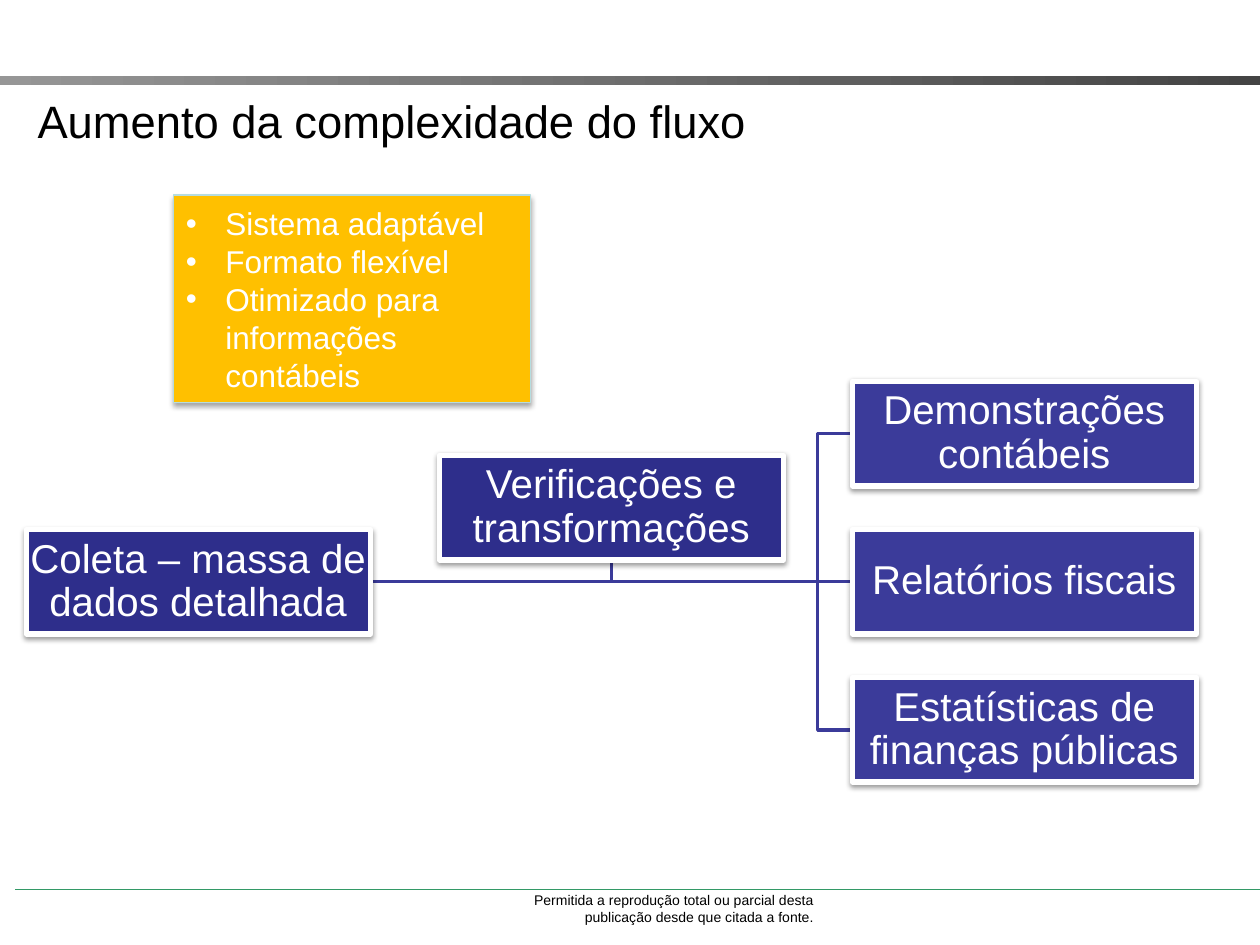
from lxml import etree
from pptx import Presentation
from pptx.dml.color import RGBColor
from pptx.enum import shapes, text
from pptx.oxml import ns
from pptx.util import Pt

COLORS = {
    "black": "000000", "white": "FFFFFF", "green": "339966",
    "bar_left": "969696", "bar_right": "444444",
    "navy": "2E2E8B", "indigo": "3B3B9A",
    "amber": "FFC000", "pale_blue": "B6DCDF",
}
FONT = "Arial"

TITLE = "Aumento da complexidade do fluxo"
FOOTER = "Permitida a reprodução total ou parcial desta publicação desde que citada a fonte."
FEATURES = ["Sistema adaptável", "Formato flexível", "Otimizado para informações contábeis"]
SOURCE = "Coleta – massa de dados detalhada"
CHECKS = "Verificações e transformações"
OUTPUTS = ["Demonstrações contábeis", "Relatórios fiscais", "Estatísticas de finanças públicas"]

BOX_WIDTH, BOX_HEIGHT = 196.8, 59.8
SOURCE_LEFT, CHECKS_LEFT, OUTPUT_LEFT = 15, 251, 487
AXIS_Y, ROW_PITCH = 332.4, 84.6
CHECKS_Y = AXIS_Y - ROW_PITCH / 2
SOURCE_RIGHT = SOURCE_LEFT + BOX_WIDTH
CHECKS_X = CHECKS_LEFT + BOX_WIDTH / 2
TRUNK_X = 467.3


def rgb(name):
    return RGBColor.from_string(COLORS[name])


def set_line(shape, color, width):
    shape.line.color.rgb = rgb(color)
    shape.line.width = Pt(width)


def format_text(frame, size, color, align, inset=None):
    frame.word_wrap = True
    if inset is not None:
        frame.margin_left = frame.margin_right = Pt(inset)
        frame.margin_top = frame.margin_bottom = Pt(inset)
    for paragraph in frame.paragraphs:
        paragraph.alignment = align
        paragraph.font.size = Pt(size)
        paragraph.font.name = FONT
        paragraph.font.color.rgb = rgb(color)


def add_text(slide, content, left, top, width, height, size, align):
    box = slide.shapes.add_textbox(Pt(left), Pt(top), Pt(width), Pt(height))
    box.text_frame.text = content
    format_text(box.text_frame, size, "black", align)
    return box


def add_rectangle(slide, left, top, width, height):
    shape = slide.shapes.add_shape(
        shapes.MSO_SHAPE.RECTANGLE, Pt(left), Pt(top), Pt(width), Pt(height))
    shape.shadow.inherit = False
    return shape


def add_shadow(shape, opacity, distance):
    effects = shape._element.spPr.find(ns.qn("a:effectLst"))
    shadow = etree.SubElement(
        effects, ns.qn("a:outerShdw"), blurRad=str(Pt(3.1)), dist=str(Pt(distance)),
        dir="5400000", rotWithShape="0")
    color = etree.SubElement(shadow, ns.qn("a:srgbClr"), val=COLORS["black"])
    etree.SubElement(color, ns.qn("a:alpha"), val=str(opacity * 1000))


def add_straight(slide, start, end, color, width):
    line = slide.shapes.add_connector(
        shapes.MSO_CONNECTOR.STRAIGHT, *[Pt(value) for value in start + end])
    set_line(line, color, width)
    etree.SubElement(line._element.spPr, ns.qn("a:effectLst"))


def add_elbow(slide, points):
    start, *rest = [(Pt(x), Pt(y)) for x, y in points]
    builder = slide.shapes.build_freeform(*start)
    builder.add_line_segments(rest, close=False)
    shape = builder.convert_to_shape()
    shape.shadow.inherit = False
    shape.fill.background()
    set_line(shape, "indigo", 2)


def add_flow_box(slide, label, left, center_y, color):
    box = add_rectangle(slide, left, center_y - BOX_HEIGHT / 2, BOX_WIDTH, BOX_HEIGHT)
    box.fill.solid()
    box.fill.fore_color.rgb = rgb(color)
    set_line(box, "white", 3)
    add_shadow(box, 38, 1.6)
    frame = box.text_frame
    frame.text = label
    frame.vertical_anchor = text.MSO_ANCHOR.MIDDLE
    format_text(frame, 23, "white", text.PP_ALIGN.CENTER, inset=1.2)
    frame.paragraphs[0].line_spacing = 0.9


def add_frame(slide):
    """Draw the top bar, title, footer rule and footer."""
    add_straight(slide, (8.6, 508.3), (720, 508.3), "green", 0.75)
    add_text(slide, FOOTER, 298, 506, 174.2, 26.6, 8, text.PP_ALIGN.RIGHT)

    bar = add_rectangle(slide, 0, 43.4, 720, 5.2)
    bar.fill.gradient()
    bar.fill.gradient_angle = 0
    for stop, color in zip(bar.fill.gradient_stops, ("bar_left", "bar_right")):
        stop.color.rgb = rgb(color)
    bar.line.fill.background()

    title = add_text(slide, TITLE, 14.4, 48.6, 669.6, 40.3, 25.9, text.PP_ALIGN.LEFT)
    title.text_frame.vertical_anchor = text.MSO_ANCHOR.MIDDLE


def add_flow(slide):
    rows = [AXIS_Y + (index - 1) * ROW_PITCH for index in range(len(OUTPUTS))]
    start = (SOURCE_RIGHT, AXIS_Y)
    add_elbow(slide, [start, (CHECKS_X, AXIS_Y), (CHECKS_X, CHECKS_Y + BOX_HEIGHT / 2)])
    for y in rows:
        if y == AXIS_Y:
            add_straight(slide, start, (OUTPUT_LEFT, y), "indigo", 2)
        else:
            add_elbow(slide, [start, (TRUNK_X, AXIS_Y), (TRUNK_X, y), (OUTPUT_LEFT, y)])

    add_flow_box(slide, SOURCE, SOURCE_LEFT, AXIS_Y, "navy")
    for label, y in zip(OUTPUTS, rows):
        add_flow_box(slide, label, OUTPUT_LEFT, y, "indigo")
    add_flow_box(slide, CHECKS, CHECKS_LEFT, CHECKS_Y, "navy")


def add_features(slide):
    box = add_rectangle(slide, 99.2, 111.4, 203.8, 118.8)
    box.fill.solid()
    box.fill.fore_color.rgb = rgb("amber")
    set_line(box, "pale_blue", 0.75)
    add_shadow(box, 35, 1.8)
    frame = box.text_frame
    frame.text = "\n".join(FEATURES)
    frame.vertical_anchor = text.MSO_ANCHOR.MIDDLE
    for paragraph in frame.paragraphs:
        properties = paragraph._p.get_or_add_pPr()
        properties.set("marL", str(Pt(22.5)))
        properties.set("indent", str(-Pt(22.5)))
        etree.SubElement(properties, ns.qn("a:buFont"), typeface=FONT)
        etree.SubElement(properties, ns.qn("a:buChar"), char="•")
    format_text(frame, 18, "white", text.PP_ALIGN.LEFT)


def main():
    presentation = Presentation()
    presentation.slide_width, presentation.slide_height = Pt(720), Pt(540)
    slide = presentation.slides.add_slide(presentation.slide_layouts[6])
    add_frame(slide)
    add_flow(slide)
    add_features(slide)
    presentation.save("out.pptx")


if __name__ == "__main__":
    main()
